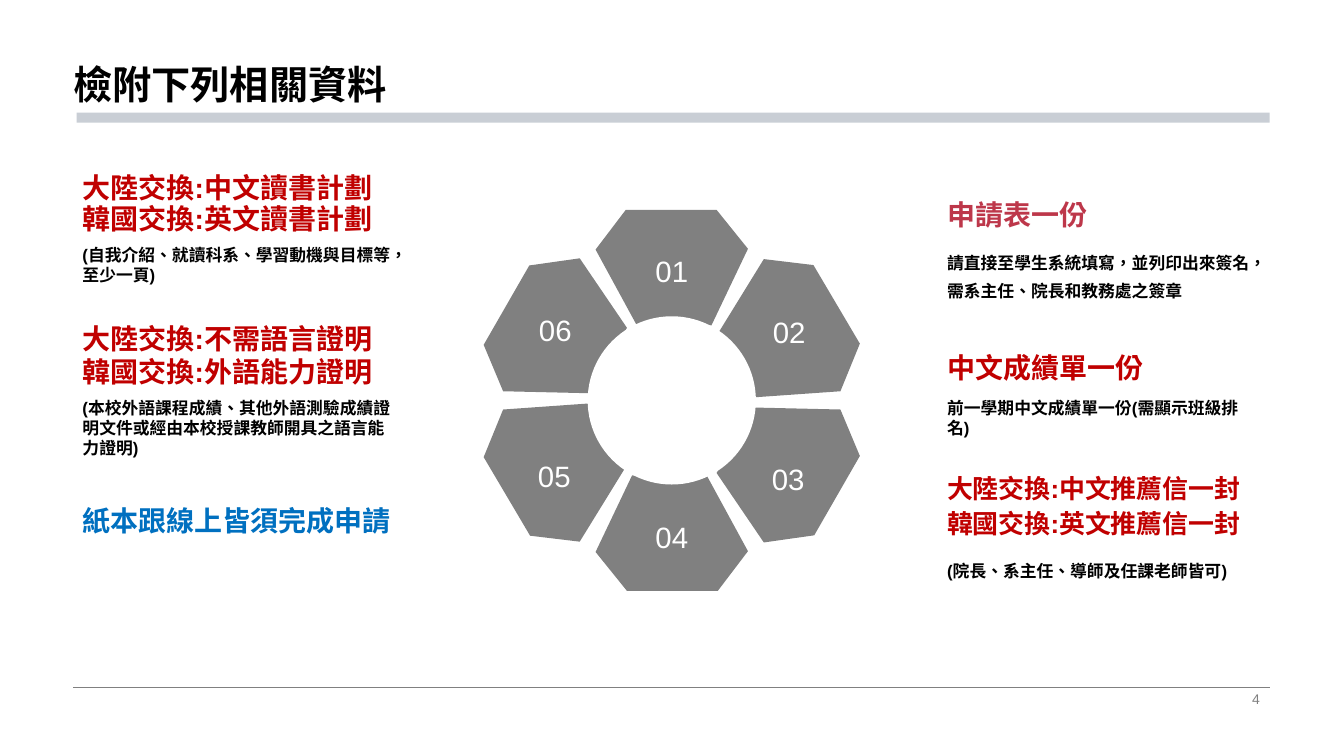
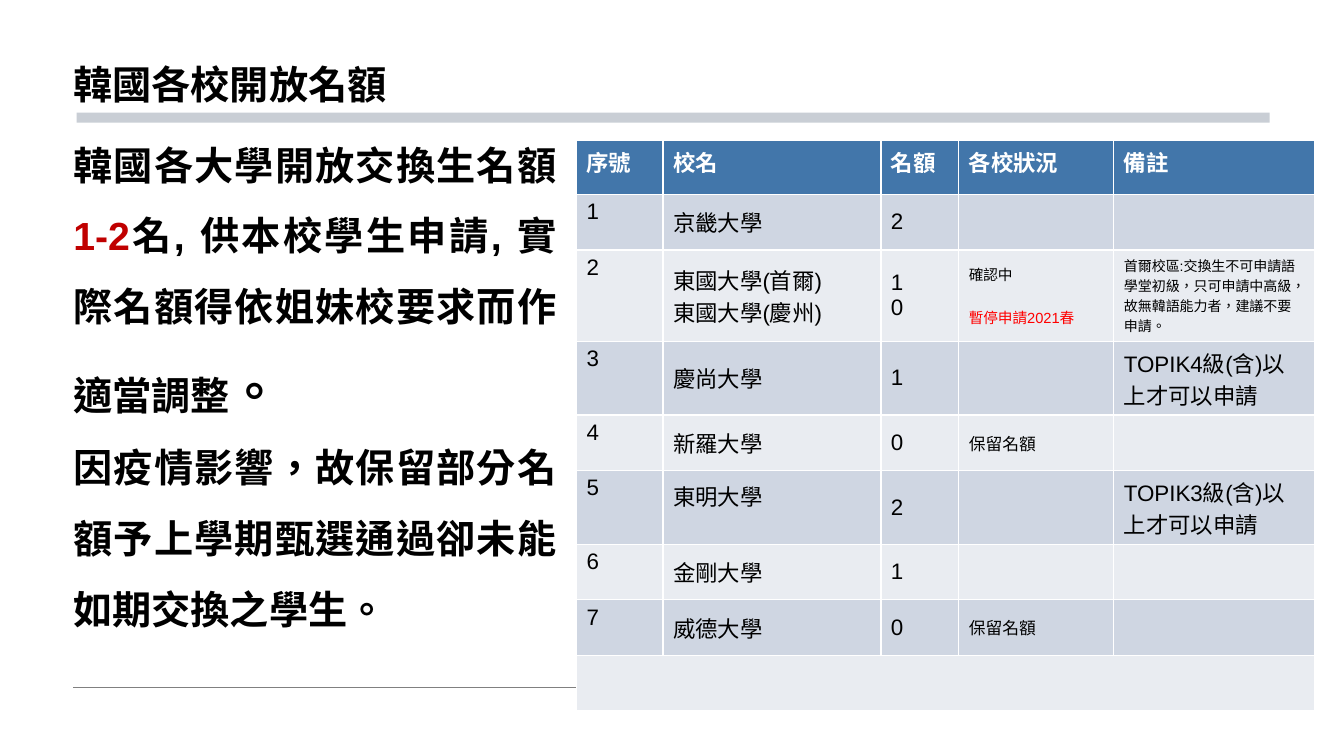
from dataclasses import dataclass

from lxml.etree import SubElement
from pptx import Presentation
from pptx.dml.color import RGBColor
from pptx.enum.lang import MSO_LANGUAGE_ID
from pptx.enum.shapes import MSO_CONNECTOR, MSO_SHAPE
from pptx.enum.text import MSO_ANCHOR, PP_ALIGN
from pptx.oxml.ns import qn
from pptx.util import Cm, Pt

FONT = "Arial"
BLACK, WHITE, GRAY, BAND = "000000", "FFFFFF", "808080", "C9CED5"
RED, ROSE, BLUE, ALERT = "C00000", "BD374A", "0070C0", "FF0000"
HEADER, ROW_DARK, ROW_LIGHT = "4276AA", "CFD6E2", "E9ECF1"
LEFT, RIGHT = 1.85, 32.0


@dataclass
class Entry:
    """A headline with an optional line above it and a note below it."""
    head: str
    note: str = ""
    lead: str = ""
    lift: float = 0
    size: float = 20
    color: str = RED
    head_spacing: float = 1
    note_spacing: float = 1


LEFT_ENTRIES = [
    Entry("韓國交換:英文讀書計劃", "(自我介紹、就讀科系、學習動機與目標等，至少一頁)",
          "大陸交換:中文讀書計劃", 0.79),
    Entry("韓國交換:外語能力證明",
          "(本校外語課程成績、其他外語測驗成績證明文件或經由本校授課教師開具之語言能力證明)",
          "大陸交換:不需語言證明", 0.84),
    Entry("紙本跟線上皆須完成申請", color=BLUE, head_spacing=0.9),
]
RIGHT_ENTRIES = [
    Entry("申請表一份", "請直接至學生系統填寫，並列印出來簽名，需系主任、院長和教務處之簽章",
          color=ROSE, head_spacing=0.9, note_spacing=1.4),
    Entry("中文成績單一份", "前一學期中文成績單一份(需顯示班級排名)", head_spacing=0.9),
    Entry("韓國交換:英文推薦信一封", "(院長、系主任、導師及任課老師皆可)",
          "大陸交換:中文推薦信一封", 0.89, 18.5, note_spacing=1.5),
]

HALF_RING = [
    [(-1.16, -4.8), (1.13, -4.8), (1.92, -3.82), (1, -1.89), (-0.88, -1.89), (-1.92, -3.8)],
    [(2.32, -3.56), (3.57, -3.41), (4.74, -1.43), (4.25, -0.23), (2.12, -0.08), (1.18, -1.71)],
    [(2.07, 0.18), (4.25, 0.23), (4.74, 1.4), (3.59, 3.4), (2.32, 3.58), (1.13, 1.83)],
]

COLUMNS = [2.18, 5.49, 1.96, 3.91, 5.05]
ROWS = [1.36, 1.4, 2.3, 1.86, 1.4, 1.86, 1.4, 1.4, 1.4]
KEPT = [("保留名額", 12, BLACK)]
QUOTAS = [
    ["序號", "校名", "名額", "各校狀況", "備註"],
    ["1", "京畿大學", "2", "", ""],
    ["2", "東國大學(首爾)\n東國大學(慶州)", "1\n0",
     [("確認中", 10.5, BLACK), ("暫停申請2021春", 10.5, ALERT)],
     [("首爾校區:交換生不可申請語學堂初級，只可申請中高級，故無韓語能力者，建議不要申請。", 10, BLACK)]],
    ["3", "慶尚大學", "1", "", "TOPIK4級(含)以上才可以申請"],
    ["4", "新羅大學", "0", KEPT, ""],
    ["5", "東明大學", "2", "", "TOPIK3級(含)以上才可以申請"],
    ["6", "金剛大學", "1", "", ""],
    ["7", "威德大學", "0", KEPT, ""],
]


def rgb(color):
    """Turn a hex string into a colour."""
    return RGBColor.from_string(color)


def paint(s, color):
    """Give a shape a flat fill without outline or shadow."""
    s.shadow.inherit = False
    s.fill.solid()
    s.fill.fore_color.rgb = rgb(color)
    s.line.fill.background()


def style(r, size, color, bold=False):
    """Set the font of a run."""
    r.font.name, r.font.size, r.font.bold = FONT, Pt(size), bold
    r.font.color.rgb = rgb(color)
    r.font.language_id = MSO_LANGUAGE_ID.TRADITIONAL_CHINESE


def text_box(s, x, y, w, h, anchor=MSO_ANCHOR.TOP):
    """Add a wrapping text box and return its frame."""
    tf = s.shapes.add_textbox(Cm(x), Cm(y), Cm(w), Cm(h)).text_frame
    tf.word_wrap = True
    tf.vertical_anchor = anchor
    return tf


def write(tf, text, size, color, bold=True, spacing=1.0, align=PP_ALIGN.LEFT):
    """Fill a frame with one paragraph in one style."""
    tf.text = text
    p = tf.paragraphs[0]
    p.line_spacing, p.alignment = spacing, align
    style(p.runs[0], size, color, bold)


def new_slide(prs, title, number=None):
    """Add a slide with footer line, title band, title and page number."""
    s = prs.slides.add_slide(prs.slide_layouts[6])
    line = s.shapes.add_connector(MSO_CONNECTOR.STRAIGHT, Cm(LEFT), Cm(17.32), Cm(RIGHT), Cm(17.32))
    line.line.color.rgb = rgb(GRAY)
    line.line.width = Pt(0.5)
    SubElement(line._element.spPr, qn("a:effectLst"))
    paint(s.shapes.add_shape(MSO_SHAPE.RECTANGLE, Cm(1.93), Cm(2.84), Cm(30.07), Cm(0.25)), BAND)
    tf = text_box(s, LEFT, 0, RIGHT - LEFT, 2.84, MSO_ANCHOR.BOTTOM)
    tf.margin_left = tf.margin_right = 0
    write(tf, title, 28, BLACK, spacing=0.9)
    if number:
        tf = text_box(s, RIGHT - 8.08, 17.32, 8.08, 0.58, MSO_ANCHOR.MIDDLE)
        write(tf, number, 10, GRAY, bold=False, align=PP_ALIGN.RIGHT)
    return s


def add_entries(s, x, y, w, entries, step=3.86, head_h=1.09, note_h=1.73):
    """Stack entries at equal steps in a column."""
    for i, e in enumerate(entries):
        top = y + i * step
        if e.lead:
            write(text_box(s, x, top - e.lift, w, head_h), e.lead, e.size, e.color)
        write(text_box(s, x, top, w, head_h), e.head, e.size, e.color, spacing=e.head_spacing)
        if e.note:
            write(text_box(s, x, top + head_h, w, note_h), e.note, 12, BLACK, spacing=e.note_spacing)


def add_ring(s, cx, cy, hole=4.24):
    """Draw six numbered petals around a round hole."""
    mirrored = [[(-dx, -dy) for dx, dy in petal] for petal in HALF_RING]
    for i, petal in enumerate(HALF_RING + mirrored, 1):
        points = [(Cm(cx + dx), Cm(cy + dy)) for dx, dy in petal]
        builder = s.shapes.build_freeform(*points[0])
        builder.add_line_segments(points[1:], close=True)
        sp = builder.convert_to_shape()
        paint(sp, GRAY)
        sp.text_frame.vertical_anchor = MSO_ANCHOR.MIDDLE
        write(sp.text_frame, f"{i:02}", 21, WHITE, bold=False, spacing=1.2, align=PP_ALIGN.CENTER)
    paint(s.shapes.add_shape(MSO_SHAPE.OVAL, Cm(cx - hole / 2), Cm(cy - hole / 2), Cm(hole), Cm(hole)), WHITE)


def add_intro(s, x, y, w, h):
    """Write the justified explanation of the quotas."""
    tf = text_box(s, x, y, w, h)
    paragraphs = [
        [("韓國各大學開放交換生名額", 28, BLACK), ("1-2", 28, RED),
         ("名, 供本校學生申請, 實際名額得依姐妹校要求而作適當調整", 28, BLACK), ("。", 36, BLACK)],
        [("因疫情影響，故保留部分名額予上學期甄選通過卻未能如期交換之學生。", 28, BLACK)],
    ]
    for i, parts in enumerate(paragraphs):
        p = tf.add_paragraph() if i else tf.paragraphs[0]
        p.alignment, p.line_spacing = PP_ALIGN.JUSTIFY, 1.5
        for text, size, color in parts:
            r = p.add_run()
            r.text = text
            style(r, size, color, bold=True)


def fill_cell(cell, content, header):
    """Write the paragraphs of one table cell."""
    if isinstance(content, str):
        color = WHITE if header else BLACK
        content = [(text, 16, color) for text in content.split("\n") if text]
    tf = cell.text_frame
    for i, (text, size, color) in enumerate(content):
        p = tf.add_paragraph() if i else tf.paragraphs[0]
        p.text = text
        style(p.runs[0], size, color, header)
        if i and size < 16:
            p.space_before = Pt(15)


def add_quota_table(s, x, y):
    """Add the table of schools and their quotas."""
    table = s.shapes.add_table(len(ROWS), len(COLUMNS), Cm(x), Cm(y),
                               Cm(sum(COLUMNS)), Cm(sum(ROWS))).table
    for column, w in zip(table.columns, COLUMNS):
        column.width = Cm(w)
    for i, (row, h) in enumerate(zip(table.rows, ROWS)):
        row.height = Cm(h)
        for cell in row.cells:
            cell.fill.solid()
            cell.fill.fore_color.rgb = rgb((ROW_DARK if i % 2 else ROW_LIGHT) if i else HEADER)
    for i, contents in enumerate(QUOTAS):
        for j, content in enumerate(contents):
            cell = table.cell(i, j)
            cell.vertical_anchor = MSO_ANCHOR.MIDDLE if i and j else MSO_ANCHOR.TOP
            fill_cell(cell, content, i == 0)
    table.cell(5, 1).margin_bottom = Cm(0.7)
    last = len(ROWS) - 1
    table.cell(last, 0).merge(table.cell(last, len(COLUMNS) - 1))


def documents_slide(prs):
    """Build the slide of required documents."""
    s = new_slide(prs, "檢附下列相關資料", "4")
    add_ring(s, 16.93, 10.09)
    add_entries(s, 23.62, 4.95, 8.36, RIGHT_ENTRIES)
    add_entries(s, 1.83, 4.95, 8.36, LEFT_ENTRIES)


def quotas_slide(prs):
    """Build the slide of quotas by school."""
    s = new_slide(prs, "韓國各校開放名額")
    add_intro(s, 1.6, 2.84, 12.67, 13.28)
    add_quota_table(s, 14.53, 3.54)


def main():
    """Build and save the presentation."""
    prs = Presentation()
    prs.slide_width, prs.slide_height = Cm(33.87), Cm(19.05)
    documents_slide(prs)
    quotas_slide(prs)
    prs.save("out.pptx")


if __name__ == "__main__":
    main()
